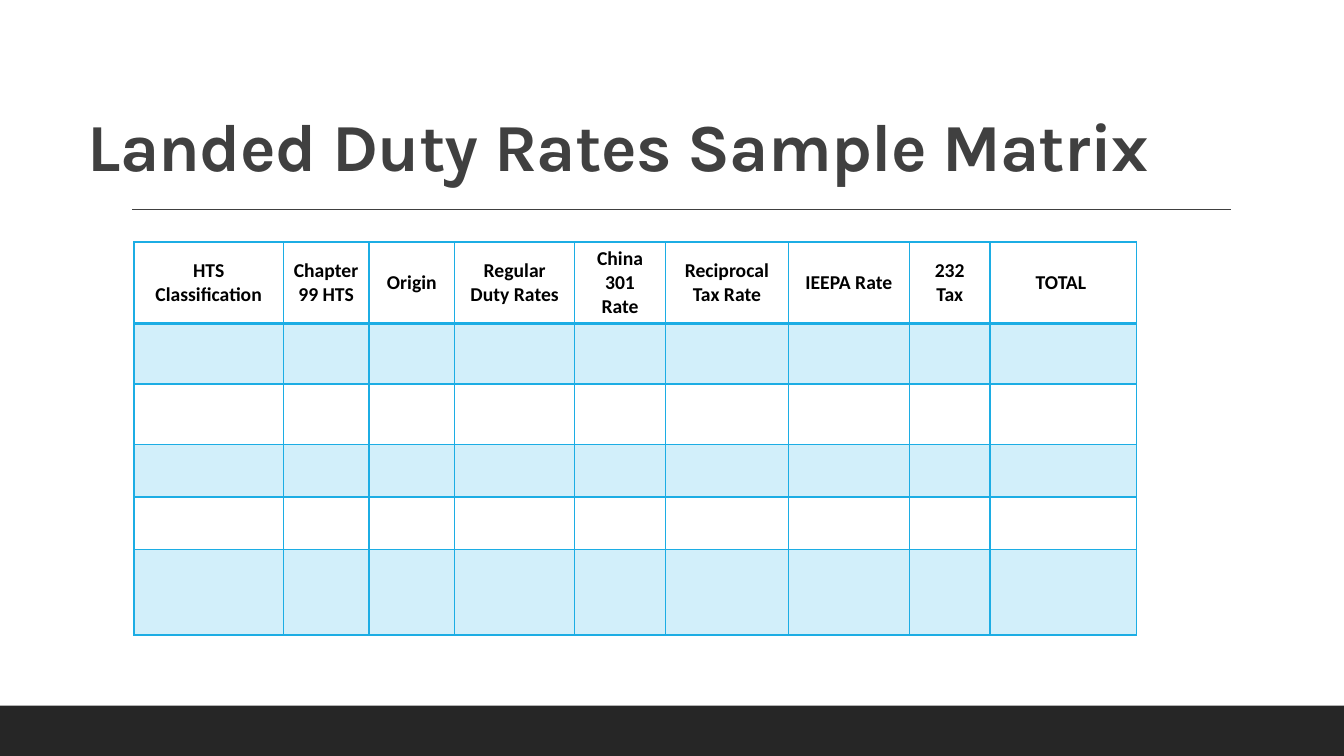
from lxml.etree import SubElement
from pptx import Presentation
from pptx.dml.color import RGBColor
from pptx.enum.shapes import MSO_CONNECTOR, MSO_SHAPE
from pptx.enum.text import MSO_ANCHOR, MSO_AUTO_SIZE, PP_ALIGN
from pptx.oxml import parse_xml
from pptx.oxml.ns import nsdecls, qn
from pptx.util import Inches, Pt

COLORS = {
    "bar": "262626",
    "title": "404040",
    "border": "1CADE4",
    "band": "D2EFFA",
    "text": "000000",
}
HEADERS = [
    "HTS Classification", "Chapter 99 HTS", "Origin", "Regular Duty Rates",
    "China 301 Rate", "Reciprocal Tax Rate", "IEEPA Rate", "232 Tax", "TOTAL ",
]
COL_WIDTHS = [1.48, 0.85, 0.85, 1.19, 0.9, 1.22, 1.2, 0.8, 1.45]
ROW_HEIGHTS = [0.81, 0.6, 0.6, 0.52, 0.52, 0.85]


def rgb(name):
    """Return the named colour."""
    return RGBColor.from_string(COLORS[name])


def style_font(font, face, size, color):
    """Apply a bold face, size and colour to a font."""
    font.name, font.size, font.bold = face, Pt(size), True
    font.color.rgb = rgb(color)


def add_bar(slide, left, top, width, height):
    """Draw the dark bar along the foot of the slide."""
    sp = slide.shapes.add_shape(
        MSO_SHAPE.RECTANGLE, Inches(left), Inches(top), Inches(width), Inches(height))
    sp.shadow.inherit = False
    sp.fill.solid()
    sp.fill.fore_color.rgb = rgb("bar")
    sp.line.fill.background()


def add_rule(slide, left, top, width):
    """Draw the thin rule below the title."""
    line = slide.shapes.add_connector(
        MSO_CONNECTOR.STRAIGHT, Inches(left), Inches(top), Inches(left + width), Inches(top))
    line.line.color.rgb = rgb("title")
    line.line.width = Pt(1)
    SubElement(line._element.spPr, qn("a:effectLst"))


def add_title(slide, text, left, top, width, height):
    """Place and format the title placeholder."""
    sp = slide.shapes.title
    sp.left, sp.top = Inches(left), Inches(top)
    sp.width, sp.height = Inches(width), Inches(height)
    tf = sp.text_frame
    tf.text = text
    tf.word_wrap = True
    tf.auto_size = MSO_AUTO_SIZE.NONE
    tf.vertical_anchor = MSO_ANCHOR.BOTTOM
    tf.margin_left = 0
    p = tf.paragraphs[0]
    p.alignment = PP_ALIGN.LEFT
    p.line_spacing = 0.9
    style_font(p.font, "Karla", 48, "title")
    p.runs[0]._r.get_or_add_rPr().set("spc", "-50")


def set_borders(cell, widths):
    """Outline a cell with the given left, right, top and bottom widths."""
    tcPr = cell._tc.get_or_add_tcPr()
    for i, (side, width) in enumerate(zip("LRTB", widths)):
        tcPr.insert(i, parse_xml(
            f'<a:ln{side} {nsdecls("a")} w="{Pt(width)}"><a:solidFill>'
            f'<a:srgbClr val="{COLORS["border"]}"/></a:solidFill></a:ln{side}>'))


def add_matrix(slide, left, top):
    """Build the duty rate table with its headers and banded empty rows."""
    table = slide.shapes.add_table(
        len(ROW_HEIGHTS), len(COL_WIDTHS), Inches(left), Inches(top),
        Inches(sum(COL_WIDTHS)), Inches(sum(ROW_HEIGHTS))).table
    table.horz_banding = False
    for column, width in zip(table.columns, COL_WIDTHS):
        column.width = Inches(width)
    last = len(ROW_HEIGHTS) - 1
    for r, height in enumerate(ROW_HEIGHTS):
        table.rows[r].height = Inches(height)
        for c, header in enumerate(HEADERS):
            cell = table.cell(r, c)
            if r % 2:
                cell.fill.solid()
                cell.fill.fore_color.rgb = rgb("band")
            else:
                cell.fill.background()
            set_borders(cell, (1, 1, 2 if r == 1 else 1, 2 if r in (0, last) else 1))
            if r == 0:
                cell.text = header
                cell.vertical_anchor = MSO_ANCHOR.MIDDLE
                p = cell.text_frame.paragraphs[0]
                p.alignment = PP_ALIGN.CENTER
                style_font(p.font, "Calibri", 14, "text")


def main():
    """Build and save the slide."""
    prs = Presentation()
    prs.slide_width, prs.slide_height = Inches(13.33), Inches(7.5)
    slide = prs.slides.add_slide(prs.slide_layouts[5])
    add_bar(slide, 0, 7, 13.33, 0.5)
    add_rule(slide, 1.31, 2.08, 10.9)
    add_title(slide, "Landed Duty Rates Sample Matrix", 0.87, 0.31, 11.33, 1.59)
    add_matrix(slide, 1.33, 2.4)
    prs.save("out.pptx")


if __name__ == "__main__":
    main()
